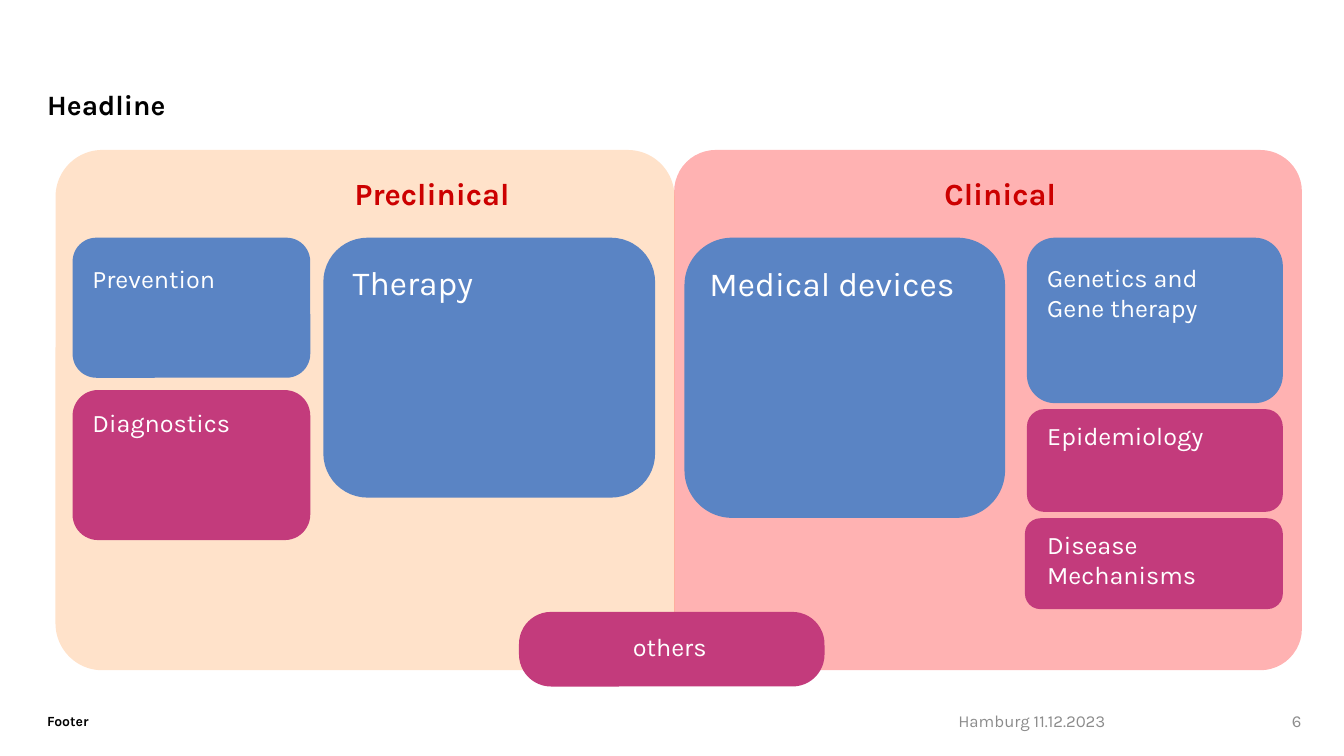
from dataclasses import dataclass

from lxml.etree import SubElement
from pptx import Presentation
from pptx.dml.color import RGBColor
from pptx.enum.shapes import MSO_SHAPE
from pptx.enum.text import MSO_ANCHOR, PP_ALIGN
from pptx.oxml.ns import qn
from pptx.slide import Slide
from pptx.util import Cm, Pt

FONT = "Karla"
BLUE = "5A84C4"
MAGENTA = "C33B7C"
RED = "CC0000"
WHITE = "FFFFFF"
BLACK = "000000"
GREY = "8C8C8C"

ROW_TOP = 5.99
LEFT_COLUMN = 1.83
RIGHT_COLUMN = 25.88
RIGHT_LABELS = 26.14
PANEL_TOP, PANEL_HEIGHT = 3.78, 13.11
HEADING_TOP, HEADING_HEIGHT = 4.27, 1.19
FOOTER_TOP, FOOTER_HEIGHT = 17.65, 1.02


@dataclass(frozen=True)
class Box:
    left: float
    top: float
    width: float
    height: float
    color: str
    rounding: float = 0.17
    opacity: int = 100


@dataclass(frozen=True)
class Label:
    text: str
    left: float
    top: float
    width: float
    height: float
    size: int = 18
    color: str = WHITE
    bold: bool = False
    alignment: PP_ALIGN = PP_ALIGN.LEFT
    anchor: MSO_ANCHOR = MSO_ANCHOR.TOP
    margin_left: float = 0.25
    margin_top: float = 0.13
    line_spacing: float = 1.0


BOXES = [
    Box(16.99, PANEL_TOP, 15.82, PANEL_HEIGHT, "FF0000", 0.08, 30),
    Box(1.4, PANEL_TOP, 15.6, PANEL_HEIGHT, "FFA050", 0.09, 30),
    Box(13.08, 15.42, 7.7, 1.88, MAGENTA, 0.43),
    Box(25.83, 13.06, 6.5, 2.29, MAGENTA),
    Box(RIGHT_COLUMN, ROW_TOP, 6.45, 4.17, BLUE),
    Box(RIGHT_COLUMN, 10.31, 6.45, 2.59, MAGENTA),
    Box(LEFT_COLUMN, ROW_TOP, 5.99, 3.53, BLUE),
    Box(LEFT_COLUMN, 9.83, 5.99, 3.78, MAGENTA),
    Box(8.15, ROW_TOP, 8.36, 6.55, BLUE),
    Box(17.25, ROW_TOP, 8.08, 7.06, BLUE),
]

LABELS = [
    Label("Headline", 1.19, 2.31, 29.21, 1.5, 20, BLACK, True,
          margin_left=0, margin_top=0, line_spacing=0.9),
    Label("Preclinical", 8.69, HEADING_TOP, 5.79, HEADING_HEIGHT, 22, RED, True),
    Label("Clinical", 23.55, HEADING_TOP, 5.26, HEADING_HEIGHT, 22, RED, True),
    Label("Prevention", 2.08, 6.5, 5.16, 1.02),
    Label("Diagnostics", 2.08, 10.13, 7.01, 1.02),
    Label("Therapy", 8.64, 6.48, 7.39, 1.27, 24),
    Label("Medical devices", 17.63, 6.5, 7.39, 1.27, 24),
    Label("Genetics and\vGene therapy", RIGHT_LABELS, 6.48, 7.39, 1.8),
    Label("Epidemiology", RIGHT_LABELS, 10.46, 5.44, 1.02),
    Label("Disease\nMechanisms", RIGHT_LABELS, 13.21, 6.17, 1.8),
    Label("others", 15.7, 15.77, 5.41, 1.02),
    Label("Footer", 1.19, FOOTER_TOP, 21.64, FOOTER_HEIGHT, 10, BLACK, True,
          anchor=MSO_ANCHOR.MIDDLE, margin_left=0),
    Label("Hamburg 11.12.2023", 23.9, FOOTER_TOP, 7.62, FOOTER_HEIGHT, 12, GREY,
          anchor=MSO_ANCHOR.MIDDLE),
    Label("6", 31.55, FOOTER_TOP, 1.5, FOOTER_HEIGHT, 12, GREY,
          alignment=PP_ALIGN.RIGHT, anchor=MSO_ANCHOR.MIDDLE),
]


def rgb(color: str) -> RGBColor:
    return RGBColor.from_string(color)


def draw_box(slide: Slide, box: Box) -> None:
    shape = slide.shapes.add_shape(
        MSO_SHAPE.ROUNDED_RECTANGLE,
        Cm(box.left), Cm(box.top), Cm(box.width), Cm(box.height),
    )
    shape.adjustments[0] = box.rounding
    shape.shadow.inherit = False
    shape.line.fill.background()
    shape.fill.solid()
    shape.fill.fore_color.rgb = rgb(box.color)
    if box.opacity < 100:
        color_element = shape.element.spPr.find(qn("a:solidFill"))[0]
        SubElement(color_element, qn("a:alpha"), val=str(box.opacity * 1000))


def draw_label(slide: Slide, label: Label) -> None:
    shape = slide.shapes.add_textbox(
        Cm(label.left), Cm(label.top), Cm(label.width), Cm(label.height)
    )
    text_frame = shape.text_frame
    text_frame.word_wrap = True
    text_frame.vertical_anchor = label.anchor
    text_frame.margin_left = Cm(label.margin_left)
    text_frame.margin_top = Cm(label.margin_top)
    text_frame.text = label.text
    for paragraph in text_frame.paragraphs:
        paragraph.alignment = label.alignment
        paragraph.line_spacing = label.line_spacing
        for run in paragraph.runs:
            run.font.name = FONT
            run.font.size = Pt(label.size)
            run.font.bold = label.bold
            run.font.color.rgb = rgb(label.color)


def main() -> None:
    presentation = Presentation()
    presentation.slide_width = Cm(33.87)
    presentation.slide_height = Cm(19.05)
    slide = presentation.slides.add_slide(presentation.slide_layouts[6])
    for box in BOXES:
        draw_box(slide, box)
    for label in LABELS:
        draw_label(slide, label)
    presentation.save("out.pptx")


if __name__ == "__main__":
    main()
